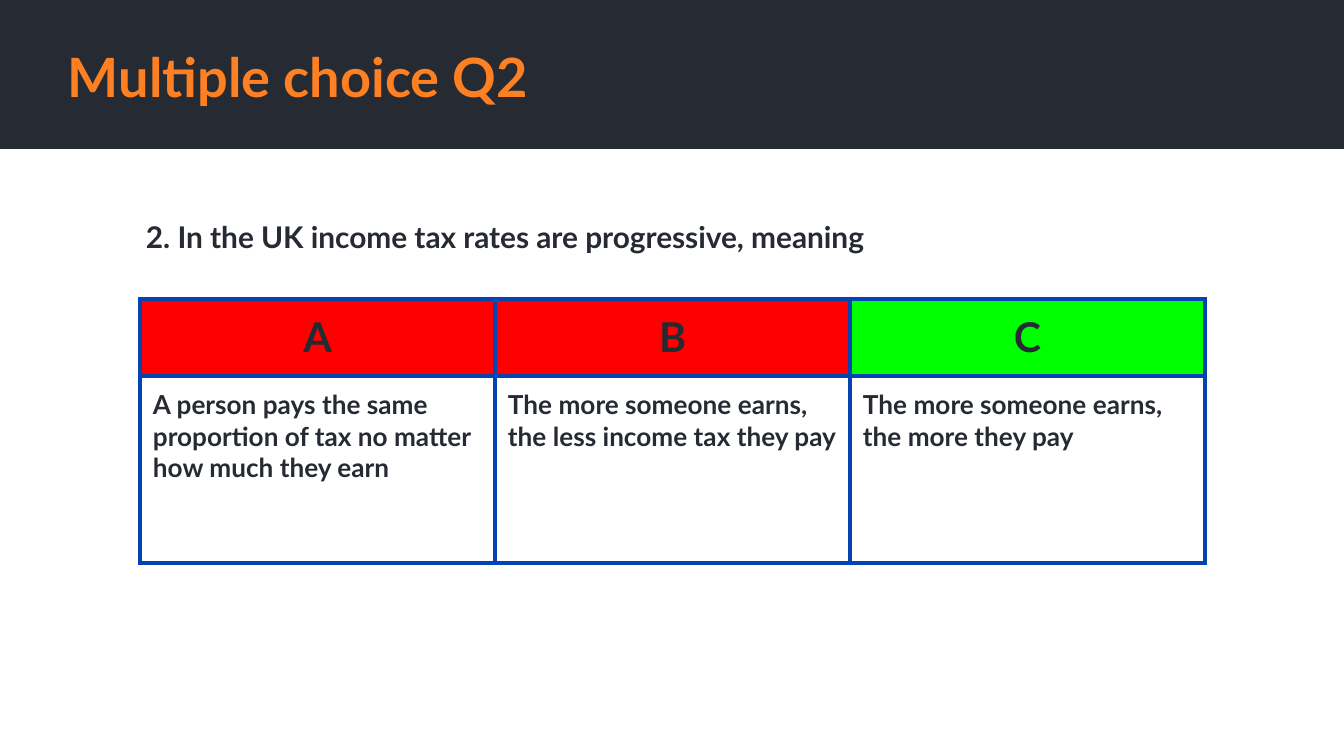
from dataclasses import dataclass

from lxml.etree import SubElement
from pptx import Presentation
from pptx.dml.color import RGBColor
from pptx.enum.shapes import MSO_SHAPE
from pptx.enum.text import MSO_ANCHOR, PP_ALIGN
from pptx.oxml.ns import qn
from pptx.util import Emu, Pt


@dataclass(frozen=True)
class Theme:
    font: str = "Lato"
    dark: str = "262A33"
    orange: str = "FF8022"
    border: str = "0543B3"
    wrong: str = "FF0000"
    right: str = "00FF00"
    title_size: int = 29
    letter_size: int = 22
    question_size: int = 16
    answer_size: int = 14
    border_width: float = 2.25


theme = Theme()
SCALE = 914400 / 134.4


def px(length):
    return Emu(round(length * SCALE))


def write(holder, text, *, size, color=theme.dark, align=PP_ALIGN.LEFT):
    holder.margin_left = holder.margin_right = px(13)
    holder.margin_top = holder.margin_bottom = px(13)
    paragraph = holder.text_frame.paragraphs[0] if hasattr(holder, "text_frame") else holder.paragraphs[0]
    paragraph.alignment = align
    span = paragraph.add_run()
    span.text = text
    span.font.name = theme.font
    span.font.size = Pt(size)
    span.font.bold = True
    span.font.color.rgb = RGBColor.from_string(color)


deck = Presentation()
deck.slide_width = px(1344)
deck.slide_height = px(756)
page = deck.slides.add_slide(deck.slide_layouts[6])

banner = page.shapes.add_shape(MSO_SHAPE.RECTANGLE, 0, 0, px(1344), px(149))
banner.shadow.inherit = False
banner.fill.solid()
banner.fill.fore_color.rgb = RGBColor.from_string(theme.dark)
banner.line.fill.background()

title = page.shapes.add_textbox(px(55), px(38), px(1175), px(75)).text_frame
title.word_wrap = True
title.vertical_anchor = MSO_ANCHOR.MIDDLE
write(title, "Multiple choice Q2", size=theme.title_size, color=theme.orange)

choices = [
    ("A", theme.wrong, "A person pays the same proportion of tax no matter how much they earn"),
    ("B", theme.wrong, "The more someone earns, the less income tax they pay"),
    ("C", theme.right, "The more someone earns, the more they pay"),
]
row_heights = [77, 187]
column_width = 355
table = page.shapes.add_table(
    len(row_heights), len(choices), px(140), px(299),
    px(column_width * len(choices)), px(sum(row_heights)),
).table
table.first_row = False
table.horz_banding = False
for row, height in zip(table.rows, row_heights):
    row.height = px(height)

for index, (letter, color, answer) in enumerate(choices):
    table.columns[index].width = px(column_width)
    header = table.cell(0, index)
    body = table.cell(1, index)
    write(header, letter, size=theme.letter_size, align=PP_ALIGN.CENTER)
    write(body, answer, size=theme.answer_size)
    for cell in (header, body):
        properties = cell._tc.get_or_add_tcPr()
        for side in ("a:lnL", "a:lnR", "a:lnT", "a:lnB"):
            edge = SubElement(properties, qn(side), w=str(Pt(theme.border_width)))
            fill = SubElement(edge, qn("a:solidFill"))
            SubElement(fill, qn("a:srgbClr"), val=theme.border)
    header.fill.solid()
    header.fill.fore_color.rgb = RGBColor.from_string(color)
    body.fill.background()

question = page.shapes.add_textbox(px(133), px(206), px(1126), px(63)).text_frame
question.word_wrap = True
write(question, "2. In the UK income tax rates are progressive, meaning", size=theme.question_size)

deck.save("out.pptx")
